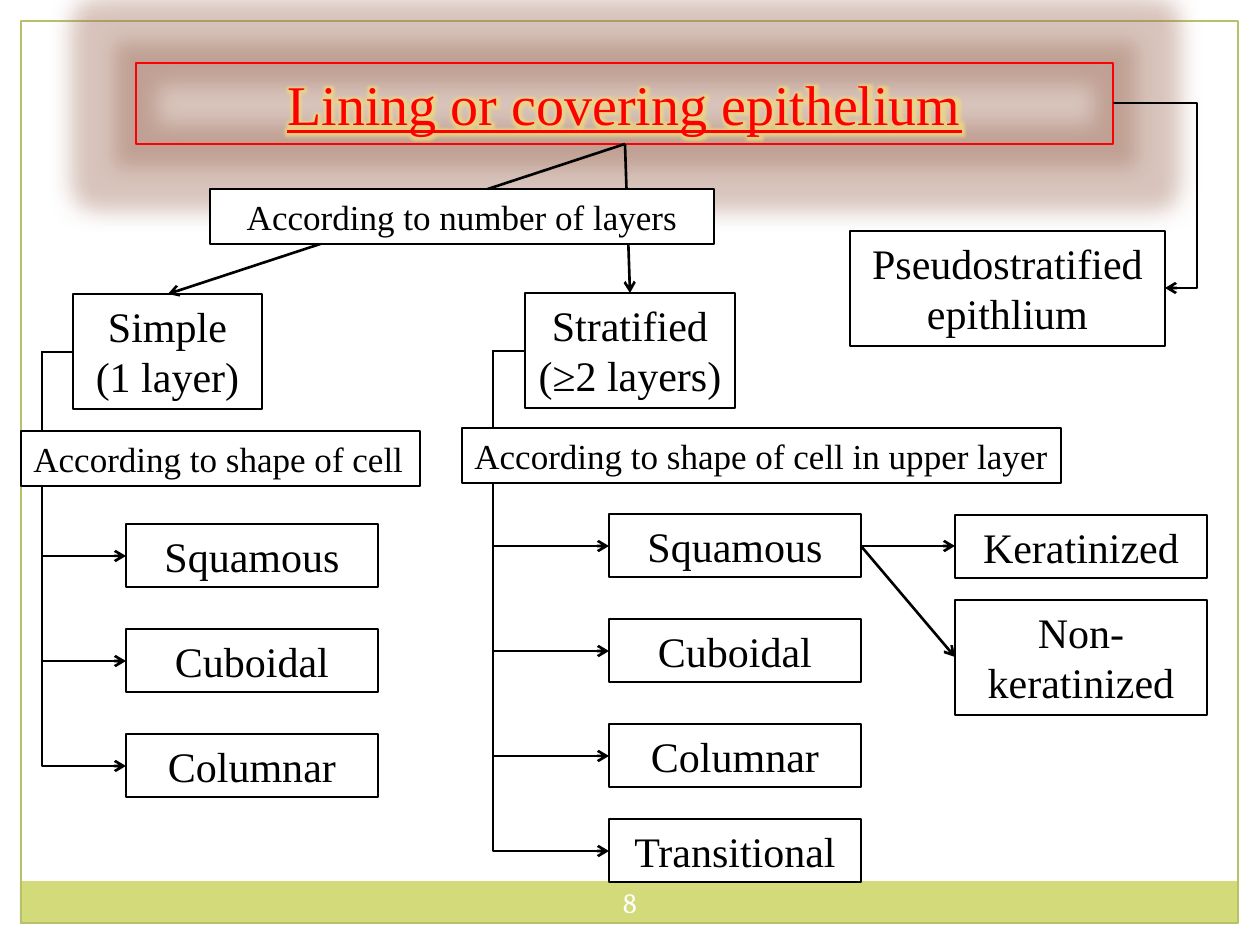
import pptx
import pptx.dml.color
import pptx.enum.shapes
import pptx.enum.text
import pptx.oxml
import pptx.oxml.ns
import pptx.util

RGB = pptx.dml.color.RGBColor
BLACK = RGB(0, 0, 0)
WHITE = RGB(255, 255, 255)
RED = RGB(255, 0, 0)
BAND = RGB(0xD2, 0xDA, 0x7A)
FRAME = RGB(0xB9, 0xC0, 0x6C)
TITLE_GLOW = RGB(0x9E, 0x6C, 0x58)
TEXT_GLOW = RGB(0xF0, 0xD8, 0x80)
RECT = pptx.enum.shapes.MSO_SHAPE.RECTANGLE
CONNECTOR = pptx.enum.shapes.MSO_CONNECTOR
ALIGN = pptx.enum.text.PP_ALIGN
ANCHOR = pptx.enum.text.MSO_ANCHOR
NS = pptx.oxml.ns.nsdecls("a")
PX = 914400 / 126

prs = pptx.Presentation()
prs.slide_width, prs.slide_height = round(1260 * PX), round(945 * PX)
s = prs.slides.add_slide(prs.slide_layouts[6])


def box(at, lines=(), size=24, line=BLACK, fill=None, color=BLACK, align=ALIGN.CENTER):
    """Add a rectangle at (left, top, width, height) px, one paragraph per line."""
    sp = s.shapes.add_shape(RECT, *[round(v * PX) for v in at])
    sp.shadow.inherit = False
    if fill is None:
        sp.fill.background()
    else:
        sp.fill.solid()
        sp.fill.fore_color.rgb = fill
    if line is None:
        sp.line.fill.background()
    else:
        sp.line.color.rgb = line
        sp.line.width = pptx.util.Pt(0.75)
    tf = sp.text_frame
    tf.word_wrap = True
    tf.vertical_anchor = ANCHOR.TOP
    for i, text in enumerate(lines):
        p = tf.paragraphs[0] if i == 0 else tf.add_paragraph()
        p.alignment = align
        r = p.add_run()
        r.text = text
        r.font.name = "Times New Roman"
        r.font.size = pptx.util.Pt(size)
        r.font.color.rgb = color
    if lines:
        tf.auto_size = pptx.enum.text.MSO_AUTO_SIZE.SHAPE_TO_FIT_TEXT
    return sp


def arrow(x1, y1, x2, y2, via=None):
    """Add an arrow; with via, it bends along the vertical at that x."""
    kind = CONNECTOR.STRAIGHT if via is None else CONNECTOR.ELBOW
    c = s.shapes.add_connector(kind, *[round(v * PX) for v in (x1, y1, x2, y2)])
    c.line.color.rgb = BLACK
    c.line.width = pptx.util.Pt(1.5)
    if via is not None:
        bend = round((via - x1) / (x2 - x1) * 100000)
        geom = c._element.spPr.find(pptx.oxml.ns.qn("a:prstGeom"))
        geom.get_or_add_avLst().append(
            pptx.oxml.parse_xml(f'<a:gd {NS} name="adj1" fmla="val {bend}"/>'))
    c.line._get_or_add_ln().append(pptx.oxml.parse_xml(f'<a:tailEnd {NS} type="arrow"/>'))
    c._element.spPr.append(pptx.oxml.parse_xml(f"<a:effectLst {NS}/>"))


# Page frame and footer band
box((20, 881, 1217, 43), line=None, fill=BAND)
box((21, 21, 1217, 902), line=FRAME)

# Title with a glow around both the box and its text
title = box((136, 63, 977, 81), ["Lining or covering epithelium"], 32, RED, color=RED)
r = title.text_frame.paragraphs[0].runs[0]
r.font.underline = True
for props, color, radius, alpha in ((title._element.spPr, TITLE_GLOW, 25, 40),
                                    (r.font._element if hasattr(r.font, "_element") else r._r.get_or_add_rPr(),
                                     TEXT_GLOW, 8, 80)):
    old = props.find(pptx.oxml.ns.qn("a:effectLst"))
    if old is not None:
        props.remove(old)
    glow = pptx.oxml.parse_xml(
        f'<a:effectLst {NS}><a:glow rad="{pptx.util.Pt(radius)}"><a:srgbClr val="{color}">'
        f'<a:alpha val="{alpha * 1000}"/></a:srgbClr></a:glow></a:effectLst>')
    fill = props.find(pptx.oxml.ns.qn("a:solidFill"))
    if fill is not None:
        fill.addnext(glow)
    else:
        props.append(glow)

# Main classes
box((73, 294, 189, 115), ["Simple", "(1 layer)"])
box((525, 293, 210, 115), ["Stratified", "(≥2 layers)"])
box((850, 231, 315, 115), ["Pseudostratified epithlium"])
arrow(625, 144, 168, 294)
arrow(625, 144, 630, 293)
arrow(1113, 103, 1165, 288, via=1197)

# Cell shapes under each class: class left, class middle, trunk x, box left, tops
branches = (
    (73, 352, 42, 126, {"Squamous": 524, "Cuboidal": 629, "Columnar": 734}),
    (525, 351, 493, 609,
     {"Squamous": 514, "Cuboidal": 619, "Columnar": 724, "Transitional": 819}),
)
for start, middle, trunk, left, cells in branches:
    for name, top in cells.items():
        box((left, top, 252, 63), [name])
        arrow(start, middle, left, top + 32, via=trunk)

# Stratified squamous subtypes
for name, top, height in (("Non- keratinized", 600, 115), ("Keratinized", 515, 63)):
    box((955, top, 252, height), [name])
    arrow(861, 546, 955, top + height // 2)

# Criteria labels over the arrows
for text, at, align in (
    ("According to number of layers", (210, 189, 504, 55), ALIGN.CENTER),
    ("According to shape of cell", (21, 431, 399, 55), ALIGN.LEFT),
    ("According to shape of cell in upper layer", (462, 428, 599, 55), ALIGN.LEFT),
):
    box(at, [text], 20, fill=WHITE, align=align)

# Page number
tb = s.shapes.add_textbox(*[round(v * PX) for v in (588, 872, 84, 60)])
tf = tb.text_frame
tf.word_wrap = True
tf.vertical_anchor = ANCHOR.MIDDLE
tf.margin_left = tf.margin_right = pptx.util.Inches(0.05)
p = tf.paragraphs[0]
p.alignment = ALIGN.CENTER
r = p.add_run()
r.text = "8"
r.font.name = "Cambria"
r.font.size = pptx.util.Pt(16)
r.font.color.rgb = WHITE

prs.save("out.pptx")
